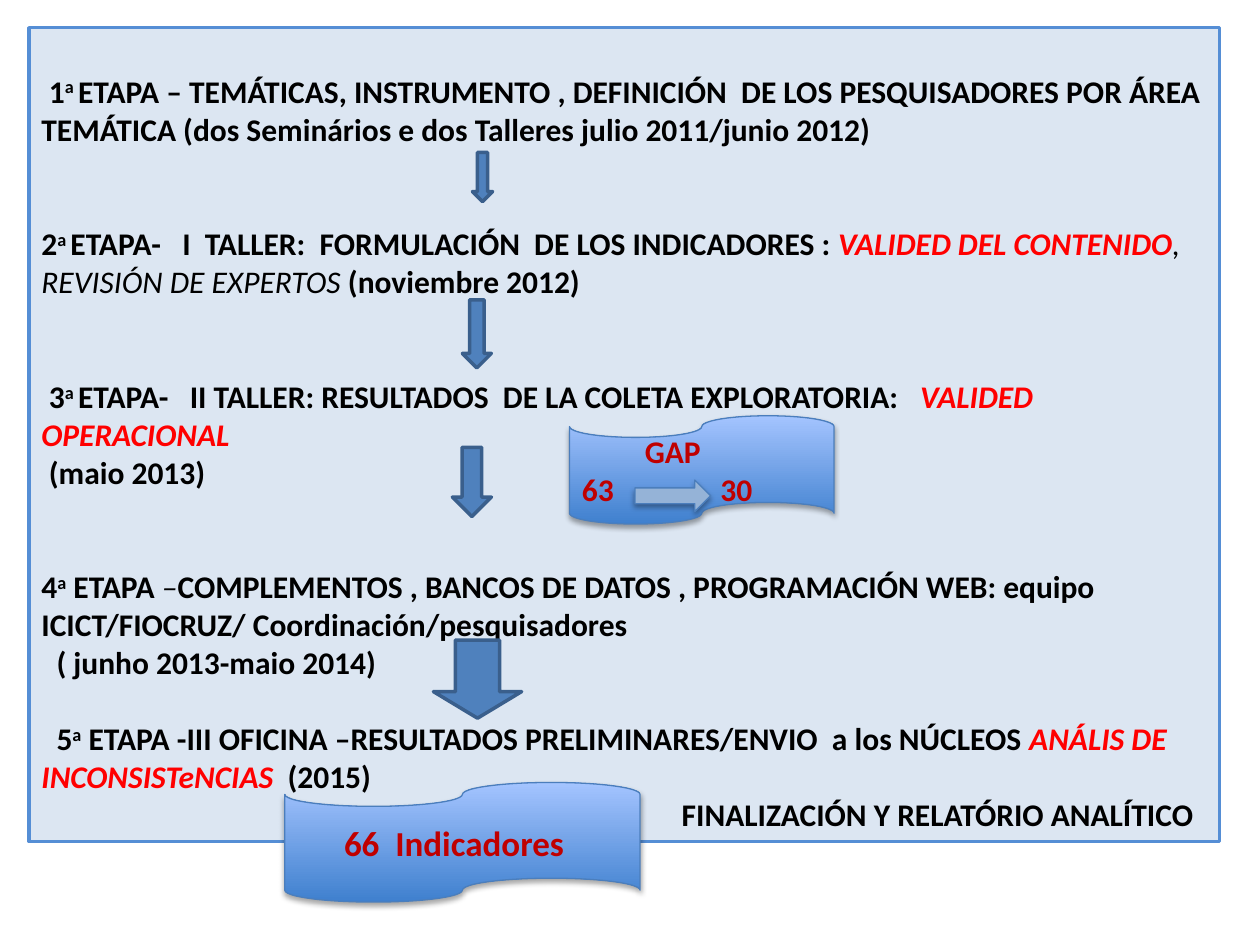
"""Build the slide showing the five stages of the indicator project."""
from lxml import etree
from pptx import Presentation
from pptx import util as u
from pptx.dml.color import RGBColor
from pptx.enum import shapes, text
from pptx.oxml import ns

BLACK = RGBColor(0, 0, 0)
RED = RGBColor(0xFF, 0, 0)
WINE = RGBColor(0xC0, 0, 0)
PALE = RGBColor(0xDC, 0xE6, 0xF2)
EDGE = RGBColor(0x55, 0x8E, 0xD5)
BLUE = RGBColor(0x4F, 0x81, 0xBD)
NAVY = RGBColor(0x3A, 0x5F, 0x8C)
STEEL = RGBColor(0x95, 0xB3, 0xD7)
RIM = RGBColor(0x4B, 0x7E, 0xBC)
DEEP = RGBColor(0x3F, 0x80, 0xCE)
SKY = RGBColor(0xA4, 0xC4, 0xFF)

FONT = "Calibri"
ROW = 22
KIND = shapes.MSO_SHAPE
LEFT, RIGHT, MID = text.PP_ALIGN.LEFT, text.PP_ALIGN.RIGHT, text.PP_ALIGN.CENTER

# style: bold, italic, raised, colour
STYLES = {
    "bold": (True, False, False, BLACK),
    "high": (True, False, True, BLACK),
    "slant": (False, True, False, BLACK),
    "key": (True, True, False, RED),
    "wine": (True, False, False, WINE),
}

# rows before, first-line indent, runs
STAGES = [
    (0, 0.06, [("bold", "1"), ("high", "a "), ("bold",
     "ETAPA – TEMÁTICAS, INSTRUMENTO , DEFINICIÓN  DE LOS PESQUISADORES POR ÁREA "
     "TEMÁTICA (dos Seminários e dos Talleres julio 2011/junio 2012)")]),
    (2, 0, [("bold", "2"), ("high", "a "),
     ("bold", "ETAPA-   I  TALLER:  FORMULACIÓN  DE LOS INDICADORES : "),
     ("key", "VALIDED DEL CONTENIDO"), ("slant", ", REVISIÓN DE EXPERTOS "),
     ("bold", "(noviembre 2012)")]),
    (2, 0.06, [("bold", "3"), ("high", "a "),
     ("bold", "ETAPA-   II TALLER: RESULTADOS  DE LA COLETA EXPLORATORIA:   "),
     ("key", "VALIDED OPERACIONAL")]),
    (0, 0.06, [("bold", "(maio 2013)")]),
    (2, 0, [("bold", "4"), ("high", "a"), ("bold", " ETAPA "), ("slant", "–"),
     ("bold", "COMPLEMENTOS , BANCOS DE DATOS , PROGRAMACIÓN WEB: equipo "
      "ICICT/FIOCRUZ/ Coordinación/pesquisadores")]),
    (0, 0.12, [("bold", "( junho 2013-maio 2014)")]),
    (1, 0.12, [("bold", "5"), ("high", "a"),
     ("bold", " ETAPA -III OFICINA –RESULTADOS PRELIMINARES/ENVIO  a los NÚCLEOS "),
     ("key", "ANÁLIS DE INCONSISTeNCIAS  "), ("bold", "(2015)")]),
]
CLOSE = [("bold", "FINALIZACIÓN Y RELATÓRIO ANALÍTICO")]
STEPS = [(3.75, 1.21, 0.16, 0.39), (3.67, 2.38, 0.23, 0.54),
         (3.59, 3.55, 0.31, 0.55), (3.44, 5.08, 0.7, 0.62)]


def draw(kind, box, fill, line, width):
    shape = slide.shapes.add_shape(kind, *map(u.Inches, box))
    shape.shadow.inherit = False
    if fill:
        shape.fill.solid()
        shape.fill.fore_color.rgb = fill
    else:
        shape.fill.gradient()
        shape.fill.gradient_angle = 90
        for stop, tone in zip(shape.fill.gradient_stops, (DEEP, SKY)):
            stop.color.rgb = tone
        for stop, place in zip(shape.fill.gradient_stops, (0, 1)):
            stop.position = place
    shape.line.color.rgb = line
    shape.line.width = u.Pt(width)
    return shape


def shade(shape):
    effects = shape._element.spPr.find(ns.qn("a:effectLst"))
    cast = etree.SubElement(effects, ns.qn("a:outerShdw"), blurRad=str(u.Pt(3.1)),
                            dist=str(u.Pt(1.8)), dir="5400000", rotWithShape="0")
    tone = etree.SubElement(cast, ns.qn("a:srgbClr"), val="000000")
    etree.SubElement(tone, ns.qn("a:alpha"), val="35000")
    return shape


def write(para, runs, align=LEFT, size=18, rows=0, **props):
    para.alignment = align
    for key, inch in props.items():
        para._p.get_or_add_pPr().set(key, str(u.Inches(inch)))
    if rows:
        para.space_before = u.Pt(rows * ROW)
    para.font.name, para.font.size = FONT, u.Pt(size)
    for style, words in runs:
        run = para.add_run()
        run.text = words
        font = run.font
        font.name, font.size = FONT, u.Pt(size)
        font.bold, font.italic, high, font.color.rgb = STYLES[style]
        if high:
            font._element.set("baseline", "30000")


deck = Presentation()
deck.slide_width, deck.slide_height = u.Inches(10), u.Inches(7.5)
slide = deck.slides.add_slide(deck.slide_layouts[6])

panel = draw(KIND.RECTANGLE, (0.23, 0.22, 9.45, 6.46), PALE, EDGE, 2)
frame = panel.text_frame
frame.word_wrap = True
frame.vertical_anchor = text.MSO_ANCHOR.TOP
frame.margin_top = u.Inches(0.35)
para = frame.paragraphs[0]
for rows, indent, runs in STAGES:
    write(para, runs, rows=rows, marL=0, indent=indent)
    para = frame.add_paragraph()
write(para, CLOSE, RIGHT, marR=0.11)

for box in STEPS:
    arrow = draw(KIND.DOWN_ARROW, box, BLUE, NAVY, 2)
arrow.adjustments[1] = 0.34

gap = shade(draw(KIND.FLOWCHART_PUNCHED_TAPE, (4.52, 3.3, 2.1, 0.86), None, RIM, 0.75))
frame = gap.text_frame
write(frame.paragraphs[0], [("wine", "GAP")], marL=0.5, indent=0)
para = frame.add_paragraph()
tabs = etree.SubElement(para._p.get_or_add_pPr(), ns.qn("a:tabLst"))
etree.SubElement(tabs, ns.qn("a:tab"), pos=str(u.Inches(1.1)), algn="l")
write(para, [("wine", "63\t30")])

total = shade(draw(KIND.FLOWCHART_PUNCHED_TAPE, (2.26, 6.21, 2.82, 0.95), None, RIM, 0.75))
total.text_frame.margin_right = u.Inches(0.23)
write(total.text_frame.paragraphs[0], [("wine", "66  Indicadores")], MID, 20)

shade(draw(KIND.RIGHT_ARROW, (5.04, 3.81, 0.6, 0.25), STEEL, RIM, 0.75))
deck.save("out.pptx")
